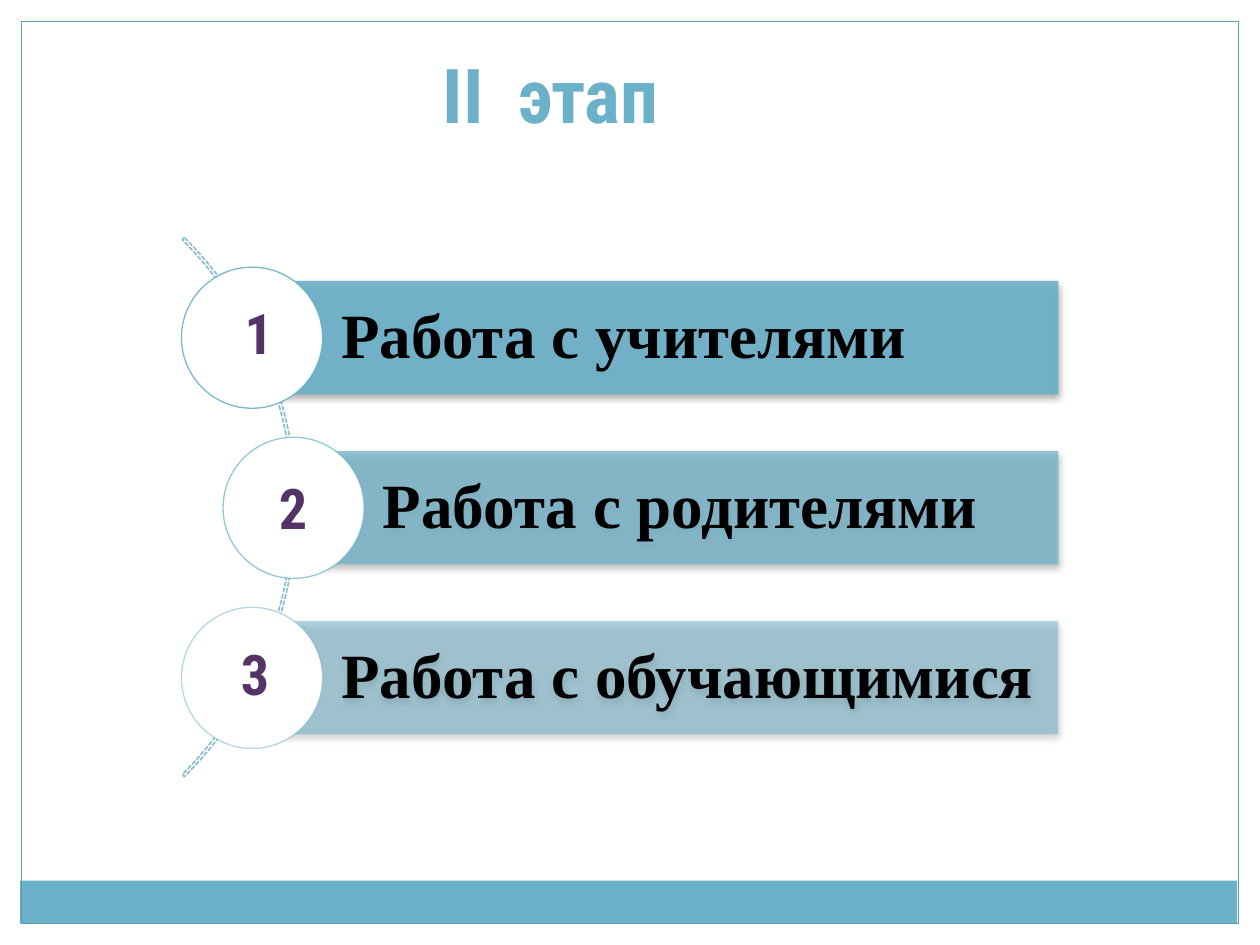
"""Build the slide on stage II: three lines of work set along an arc."""
from lxml.etree import SubElement as Sub
from pptx import Presentation
from pptx.dml.color import RGBColor as Rgb
from pptx.enum.dml import MSO_LINE as Dash
from pptx.enum.shapes import MSO_SHAPE as Kind
from pptx.enum.text import MSO_ANCHOR as Anchor, PP_ALIGN as Align
from pptx.oxml.ns import qn
from pptx.util import Inches, Pt

HUE = {"blue": "6BB1C9", "edge": "5E9CB1", "arc": "85BBCF",
       "white": "FFFFFF", "black": "000000", "plum": "543466"}
HEAD = "Roboto Condensed"
BODY = "Times New Roman"

deck = Presentation()
deck.slide_width, deck.slide_height = Inches(10), Inches(7.5)
slide = deck.slides.add_slide(deck.slide_layouts[6])
shapes = slide.shapes


def draw(kind, box, fill=None, line=None, width=0.75):
    shape = shapes.add_shape(kind, *map(Inches, box))
    shape.shadow.inherit = False
    if fill:
        shape.fill.solid()
        shape.fill.fore_color.rgb = Rgb.from_string(HUE[fill])
    else:
        shape.fill.background()
    if line:
        shape.line.color.rgb = Rgb.from_string(HUE[line])
        shape.line.width = Pt(width)
    else:
        shape.line.fill.background()
    return shape


def write(shape, text, size, font, hue, align, anchor):
    frame = shape.text_frame
    frame.word_wrap = True
    frame.vertical_anchor = anchor
    para = frame.paragraphs[0]
    para.alignment = align
    run = para.add_run()
    run.text = text
    run.font.size, run.font.name, run.font.bold = Pt(size), font, True
    run.font.color.rgb = Rgb.from_string(HUE[hue])
    return frame


draw(Kind.RECTANGLE, (0.16, 6.99, 9.66, 0.34), "blue")
draw(Kind.RECTANGLE, (0.17, 0.17, 9.66, 7.16), line="edge")

title = shapes.add_textbox(*map(Inches, (0, 0.44, 8.74, 0.71)))
write(title, "II  этап", 43.2, HEAD, "blue", Align.CENTER, Anchor.BOTTOM)

arc = draw(Kind.BLOCK_ARC, (-3.7, 1, 6.05, 6.05), line="arc", width=0.9)
arc.line.dash_style = Dash.SQUARE_DOT
for i, value in enumerate((189, 27, 0.004)):
    arc.adjustments[i] = value

RIGHT, TOP, STEP, HIGH, DIAM = 8.4, 2.23, 1.35, 0.9, 1.12
rows = [("Работа с учителями", 2, 90),
        ("Работа с родителями", 2.33, 70),
        ("Работа с обучающимися", 2, 50)]
for i, (text, left, alpha) in enumerate(rows):
    top = TOP + i * STEP
    bar = draw(Kind.RECTANGLE, (left, top, RIGHT - left, HIGH), "blue")
    frame = write(bar, text, 36, BODY, "black", Align.LEFT, Anchor.MIDDLE)
    frame.margin_left, frame.margin_right = Inches(0.71), Inches(0.1)
    frame.paragraphs[0].line_spacing = 0.9
    ring = draw(Kind.OVAL, (left - DIAM / 2, top + (HIGH - DIAM) / 2, DIAM, DIAM),
                "white", "blue")
    for part in (bar.fill, ring.line.fill):
        tint = part._xPr.find(qn("a:solidFill"))[0]
        Sub(tint, qn("a:alpha"), val=str(alpha * 1000))
    glow = Sub(bar._element.spPr.find(qn("a:effectLst")), qn("a:outerShdw"),
               blurRad=str(Pt(4)), dist=str(Pt(2)), dir="5400000", rotWithShape="0")
    shade = Sub(glow, qn("a:srgbClr"), val=HUE["black"])
    Sub(shade, qn("a:alpha"), val="35000")

marks = [(1.74, 2.32, 0.63), (1.93, 3.71, 0.79), (1.71, 5.03, 0.63)]
for num, (left, top, wide) in enumerate(marks, 1):
    label = shapes.add_textbox(*map(Inches, (left, top, wide, 0.64)))
    write(label, str(num), 32, HEAD, "plum", Align.CENTER, Anchor.TOP)

deck.save("out.pptx")
